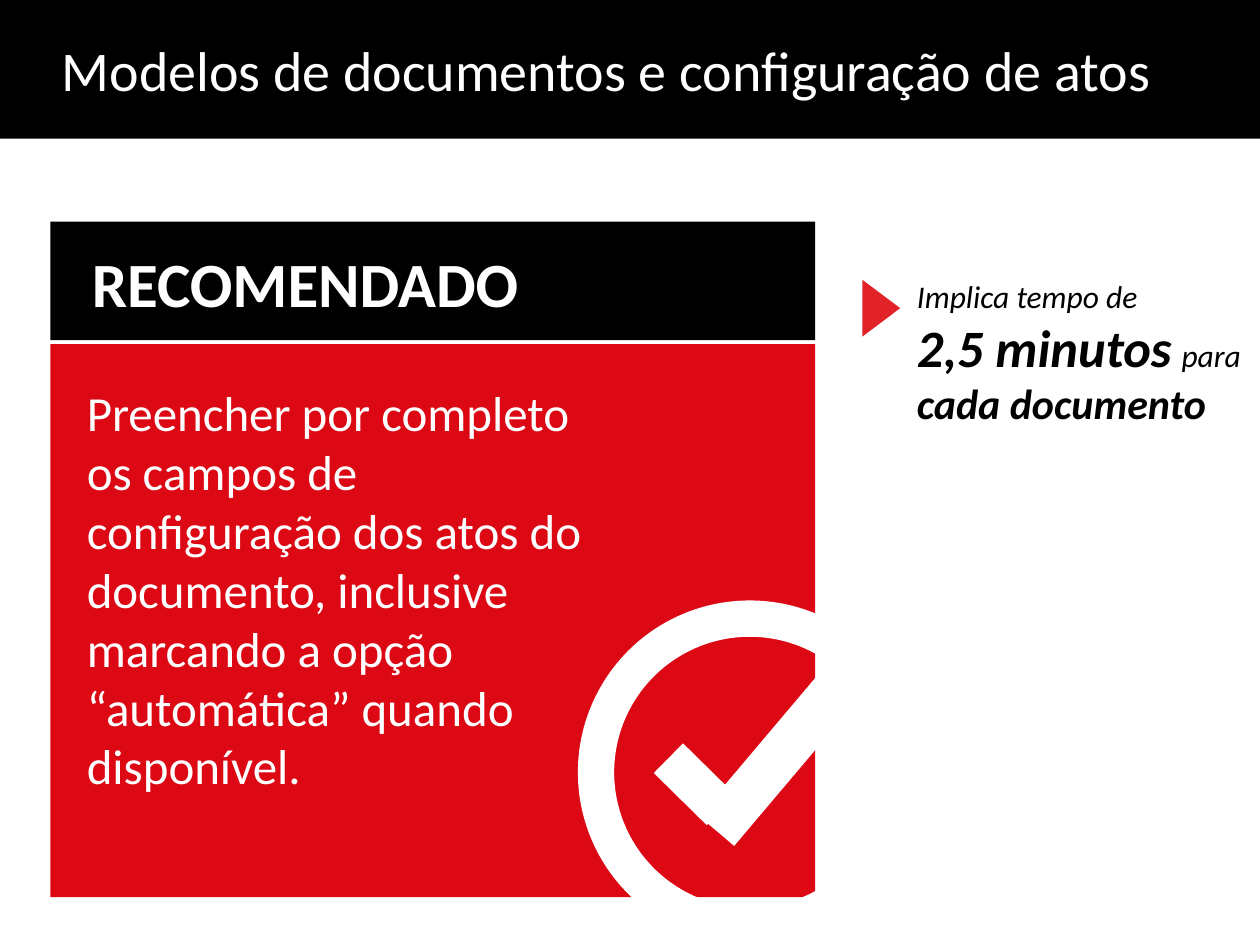
from pptx import Presentation
from pptx.dml.color import RGBColor
from pptx.enum.shapes import MSO_SHAPE
from pptx.enum.text import MSO_ANCHOR, MSO_AUTO_SIZE, PP_ALIGN
from pptx.util import Pt

RECTANGLE, OVAL, TRIANGLE = MSO_SHAPE.RECTANGLE, MSO_SHAPE.OVAL, MSO_SHAPE.ISOSCELES_TRIANGLE
MIDDLE, LEFT, NO_AUTOFIT = MSO_ANCHOR.MIDDLE, PP_ALIGN.LEFT, MSO_AUTO_SIZE.NONE
FONT = "Calibri"
COLORS = {"black": "000000", "white": "FFFFFF", "red": "DC0814", "marker": "E12229"}


def color(name):
    return RGBColor.from_string(COLORS[name])


def set_font(font, size, fill, bold=False, italic=False):
    font.name, font.size, font.bold, font.italic = FONT, Pt(size), bold, italic
    font.color.rgb = color(fill)


def add_filled(page, kind, box, fill, rotation=0):
    shape = page.shapes.add_shape(kind, *map(Pt, box))
    shape.shadow.inherit = False
    shape.fill.solid()
    shape.fill.fore_color.rgb = color(fill)
    shape.line.fill.background()
    shape.rotation = rotation
    return shape


def add_text(page, box, text, size, fill, bold=False):
    """Add a wrapping text box and return its paragraph."""
    frame = page.shapes.add_textbox(*map(Pt, box)).text_frame
    frame.word_wrap = True
    para = frame.paragraphs[0]
    para.text = text
    set_font(para.font, size, fill, bold)
    return para


def add_title_band(page, box):
    title = page.shapes.title
    title.left, title.top, title.width, title.height = map(Pt, box)
    title.fill.solid()
    title.fill.fore_color.rgb = color("black")
    frame = title.text_frame
    frame.auto_size = NO_AUTOFIT
    frame.vertical_anchor = MIDDLE
    frame.margin_left = Pt(35.3)
    para = frame.paragraphs[0]
    para.text = "Modelos de documentos e configuração de atos"
    para.alignment = LEFT
    set_font(para.font, 32, "white")


def add_check_mark(page, left, top, size):
    """Draw a white ring with a tick made of two rotated bars."""
    ring = page.shapes.add_shape(OVAL, Pt(left), Pt(top), Pt(size), Pt(size))
    ring.shadow.inherit = False
    ring.fill.background()
    ring.line.color.rgb = color("white")
    ring.line.width = Pt(20.75)
    add_filled(page, RECTANGLE, (left + 44.6, top + 73.4, 23.8, 42.5), "white", 314.6)
    add_filled(page, RECTANGLE, (left + 99.4, top + 1.4, 26.6, 136), "white", 40.2)


def add_recommendation(page, left, top, width, height):
    header_height, gap = 67.7, 2.2
    body_top = top + header_height + gap
    body_height = height - header_height - gap
    add_filled(page, RECTANGLE, (left, top, width, header_height), "black")
    add_filled(page, RECTANGLE, (left, body_top, width, body_height), "red")
    add_text(page, (left + 16.6, top + 9.4, 374, 51), "RECOMENDADO", 36, "white", True)
    add_text(page, (left + 13.7, body_top + 18.7, 298, 245),
             "Preencher por completo os campos de configuração dos atos do documento, "
             "inclusive marcando a opção “automática” quando disponível.", 28, "white")
    add_check_mark(page, left + 311.8, top + 226.8, 175.7)


def add_time_note(page, left, top, width, height):
    add_filled(page, TRIANGLE, (left, top + 10.5, 32.4, 21.6), "marker", 90)
    text_left = left + 29.5
    para = add_text(page, (text_left, top, left + width - text_left, height),
                    "", 18, "black")
    spans = [("Implica tempo de", 18, False), None, ("2,5 minutos", 30, True),
             (" ", 24, True), ("para ", 18, False), ("cada documento", 24, True)]
    for item in spans:
        if item is None:
            para.add_line_break()
            continue
        text, size, bold = item
        span = para.add_run()
        span.text = text
        set_font(span.font, size, "black", bold, italic=True)


def main():
    deck = Presentation()
    deck.slide_width, deck.slide_height = Pt(720), Pt(540)
    page = deck.slides.add_slide(deck.slide_layouts.get_by_name("Title Only"))
    add_title_band(page, (0, 0, 720, 79.2))
    add_recommendation(page, 28.8, 126.7, 437, 386)
    add_time_note(page, 487.4, 154.8, 229.6, 94.3)
    deck.save("out.pptx")


if __name__ == "__main__":
    main()
